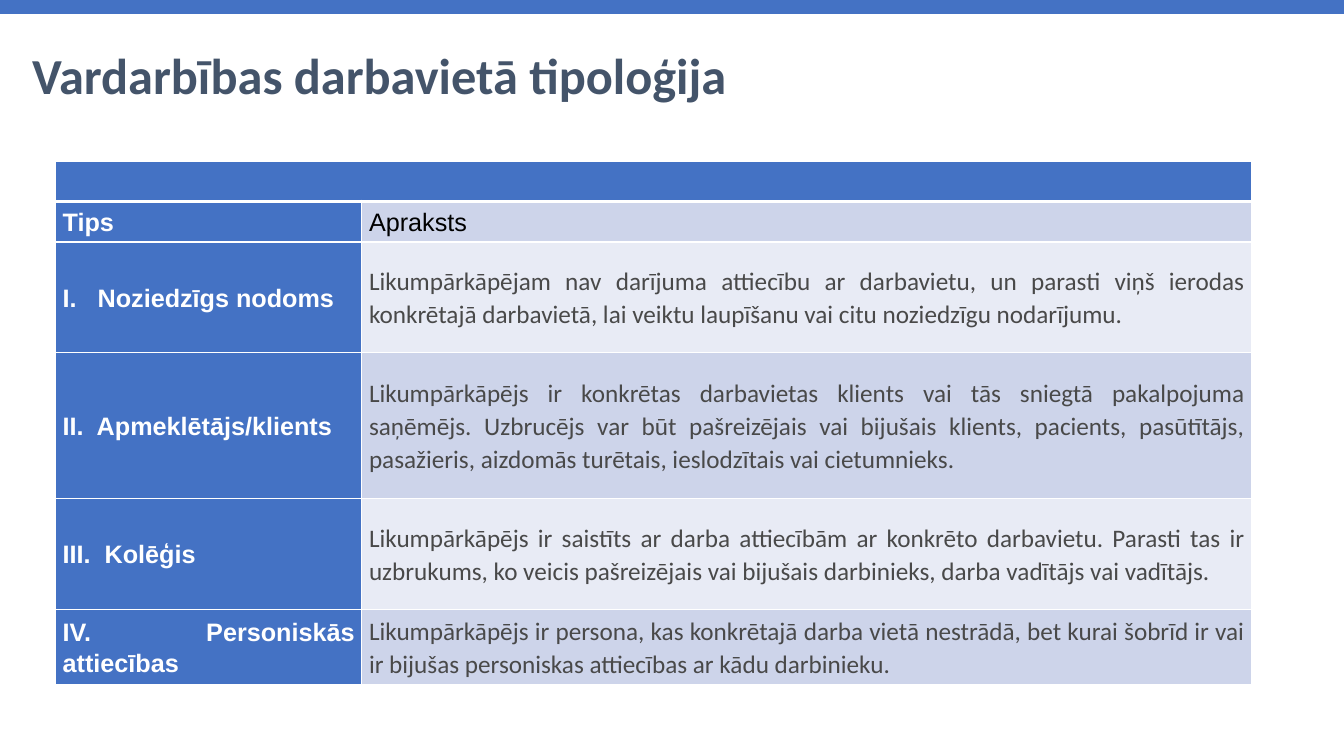
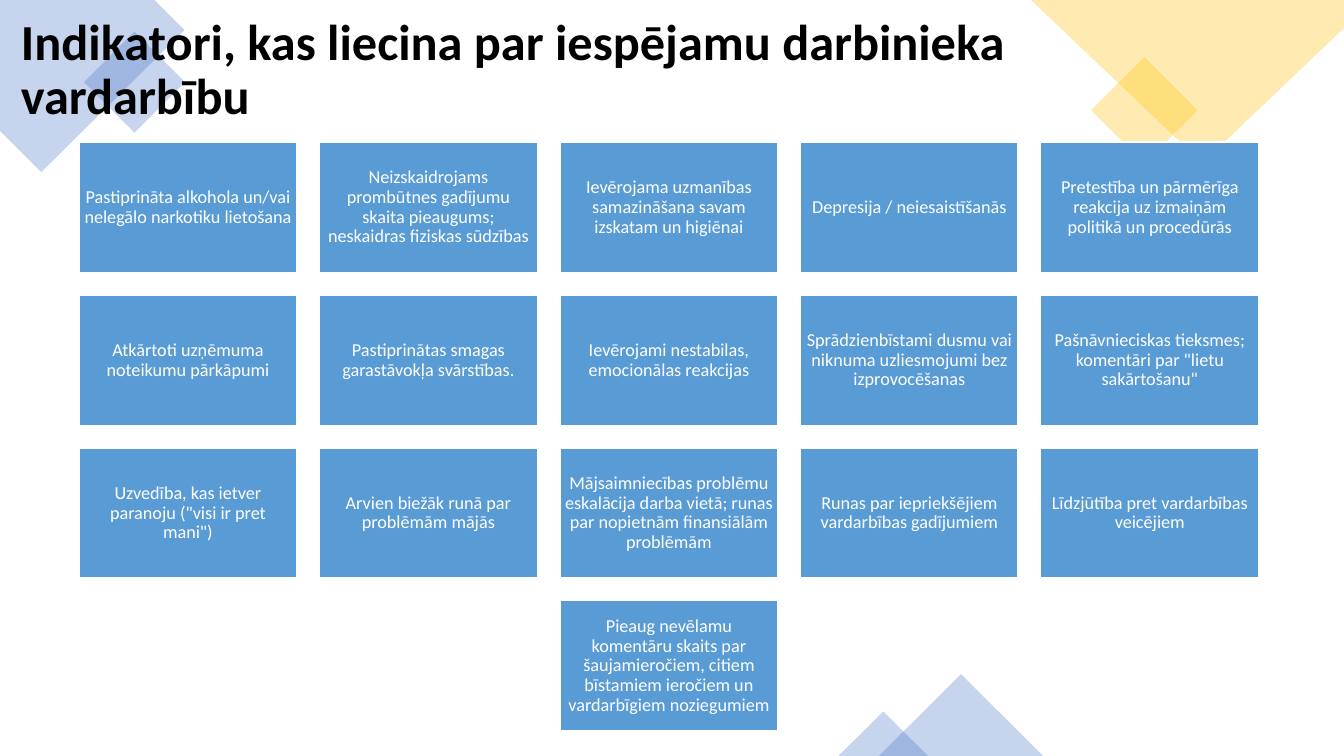
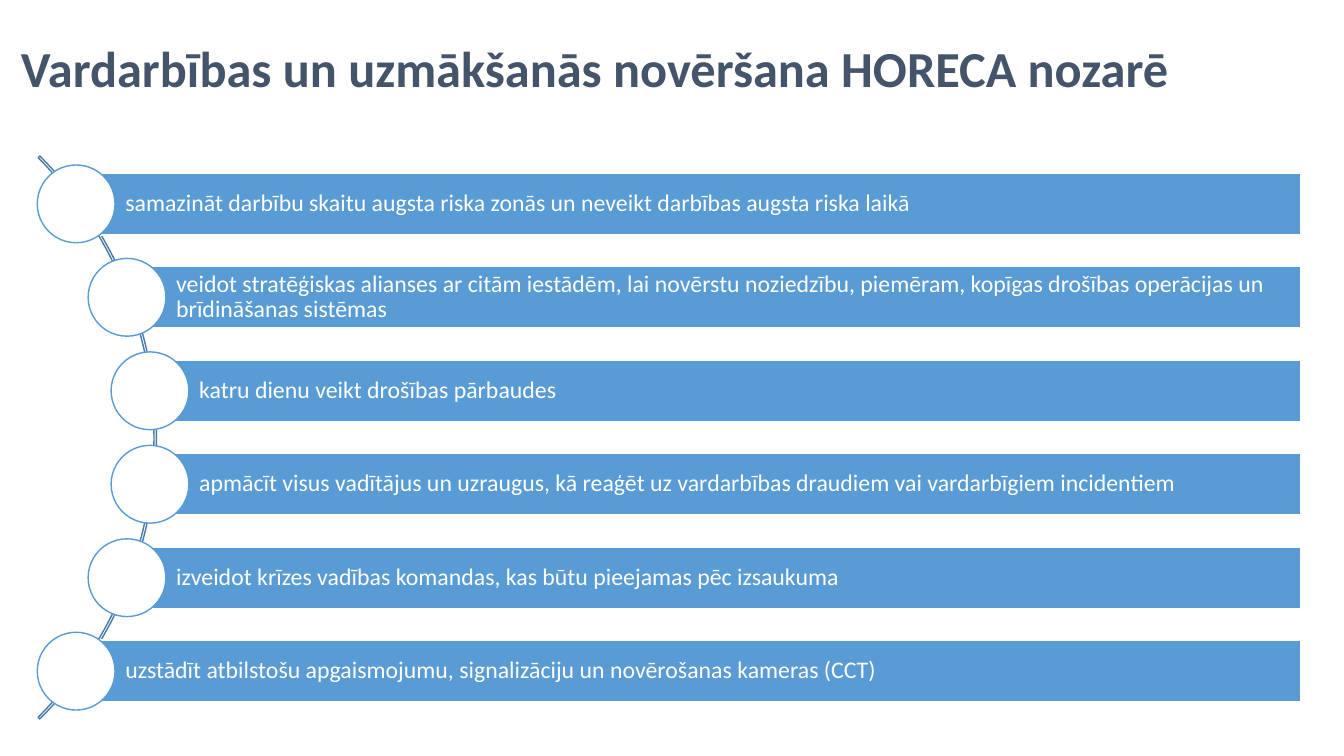
import math

import lxml.etree
import pptx
import pptx.dml.color
import pptx.enum.shapes
import pptx.enum.text
import pptx.oxml.ns
import pptx.util

Cm = pptx.util.Cm
Pt = pptx.util.Pt
SHAPE = pptx.enum.shapes.MSO_SHAPE
ALIGN = pptx.enum.text.PP_ALIGN
ANCHOR = pptx.enum.text.MSO_ANCHOR

SLIDE_WIDTH, SLIDE_HEIGHT = 33.87, 19.05
BLUE, SKY, GOLD, NAVY = "4472C4", "599BD5", "FFC000", "44546A"
WHITE, BLACK, GREY, ARC_BLUE = "FFFFFF", "000000", "494949", "487AA8"
STRIPES = ["E8EBF5", "CDD4EA"]


def text_format(size, color, margins, name="Calibri", bold=False, spacing=0.9,
                align=ALIGN.LEFT, anchor=ANCHOR.MIDDLE):
    """Collect the values for a text holder, its paragraph and its font; margins in cm."""
    sides = ("margin_left", "margin_top", "margin_right", "margin_bottom")
    return {
        "holder": {"vertical_anchor": anchor, **dict(zip(sides, map(Cm, margins)))},
        "paragraph": {"line_spacing": spacing, "alignment": align},
        "font": {"size": Pt(size), "name": name, "bold": bold},
        "color": color,
    }


TITLE_MARGINS = (0.25, 0.13, 0.25, 0.13)
CELL_STYLE = {"size": 18, "margins": (0.18, 0, 0.18, 0), "spacing": 1.07, "align": ALIGN.JUSTIFY}
TITLE = text_format(36, NAVY, TITLE_MARGINS, bold=True)
LOW_TITLE = text_format(36, NAVY, TITLE_MARGINS, bold=True, anchor=ANCHOR.BOTTOM)
BLACK_TITLE = text_format(36, BLACK, TITLE_MARGINS, bold=True)
CARD = text_format(13, WHITE, (0.13, 0.13, 0.13, 0.13), align=ALIGN.CENTER)
BAR = text_format(17, WHITE, (1.24, 0.13, 0.13, 0.13))
TYPE_CELL = text_format(color=WHITE, name="Arial", bold=True, **CELL_STYLE)
HEADING_CELL = text_format(color=BLACK, name="Arial", **CELL_STYLE)
DESCRIPTION_CELL = text_format(color=GREY, **CELL_STYLE)

TYPES = [
    ("Tips", "Apraksts"),
    ("I.   Noziedzīgs nodoms",
     "Likumpārkāpējam nav darījuma attiecību ar darbavietu, un parasti viņš ierodas "
     "konkrētajā darbavietā, lai veiktu laupīšanu vai citu noziedzīgu nodarījumu."),
    ("II.  Apmeklētājs/klients",
     "Likumpārkāpējs ir konkrētas darbavietas klients vai tās sniegtā pakalpojuma "
     "saņēmējs. Uzbrucējs var būt pašreizējais vai bijušais klients, pacients, "
     "pasūtītājs, pasažieris, aizdomās turētais, ieslodzītais vai cietumnieks."),
    ("III.  Kolēģis",
     "Likumpārkāpējs ir saistīts ar darba attiecībām ar konkrēto darbavietu. Parasti tas ir "
     "uzbrukums, ko veicis pašreizējais vai bijušais darbinieks, darba vadītājs vai vadītājs."),
    ("IV.  Personiskās attiecības",
     "Likumpārkāpējs ir persona, kas konkrētajā darba vietā nestrādā, bet kurai šobrīd ir vai "
     "ir bijušas personiskas attiecības ar kādu darbinieku."),
]

INDICATORS = [
    "Pastiprināta alkohola un/vai nelegālo narkotiku lietošana",
    "Neizskaidrojams prombūtnes gadījumu skaita pieaugums; neskaidras fiziskas sūdzības",
    "Ievērojama uzmanības samazināšana savam izskatam un higiēnai",
    "Depresija / neiesaistīšanās",
    "Pretestība un pārmērīga reakcija uz izmaiņām politikā un procedūrās",
    "Atkārtoti uzņēmuma noteikumu pārkāpumi",
    "Pastiprinātas smagas garastāvokļa svārstības.",
    "Ievērojami nestabilas, emocionālas reakcijas",
    "Sprādzienbīstami dusmu vai niknuma uzliesmojumi bez izprovocēšanas",
    "Pašnāvnieciskas tieksmes; komentāri par \"lietu sakārtošanu\"",
    "Uzvedība, kas ietver paranoju (\"visi ir pret mani\")",
    "Arvien biežāk runā par problēmām mājās",
    "Mājsaimniecības problēmu eskalācija darba vietā; runas par nopietnām finansiālām problēmām",
    "Runas par iepriekšējiem vardarbības gadījumiem",
    "Līdzjūtība pret vardarbības veicējiem",
    "Pieaug nevēlamu komentāru skaits par šaujamieročiem, citiem bīstamiem ieročiem un "
    "vardarbīgiem noziegumiem",
]

MEASURES = [
    "samazināt darbību skaitu augsta riska zonās un neveikt darbības augsta riska laikā",
    "veidot stratēģiskas alianses ar citām iestādēm, lai novērstu noziedzību, piemēram, "
    "kopīgas drošības operācijas un brīdināšanas sistēmas",
    "katru dienu veikt drošības pārbaudes",
    "apmācīt visus vadītājus un uzraugus, kā reaģēt uz vardarbības draudiem vai "
    "vardarbīgiem incidentiem",
    "izveidot krīzes vadības komandas, kas būtu pieejamas pēc izsaukuma",
    "uzstādīt atbilstošu apgaismojumu, signalizāciju un novērošanas kameras (CCT)",
]


def rgb(color):
    return pptx.dml.color.RGBColor.from_string(color)


def set_values(target, values):
    for name, value in values.items():
        setattr(target, name, value)


def write(holder, text, style):
    """Fill a text frame or a table cell with one formatted paragraph."""
    set_values(holder, style["holder"])
    frame = getattr(holder, "text_frame", holder)
    frame.word_wrap = True
    paragraph = frame.paragraphs[0]
    set_values(paragraph, style["paragraph"])
    run = paragraph.add_run()
    run.text = text
    set_values(run.font, style["font"])
    run.font.color.rgb = rgb(style["color"])


def paint(shape, fill=None, line=None, width=1, opacity=100):
    shape.shadow.inherit = False
    if fill:
        shape.fill.solid()
        shape.fill.fore_color.rgb = rgb(fill)
    else:
        shape.fill.background()
    if opacity < 100:
        color = shape._element.spPr.find(".//" + pptx.oxml.ns.qn("a:srgbClr"))
        lxml.etree.SubElement(color, pptx.oxml.ns.qn("a:alpha"), val=str(opacity * 1000))
    if line:
        shape.line.color.rgb = rgb(line)
        shape.line.width = Pt(width)
    else:
        shape.line.fill.background()


def add_shape(slide, kind, box, **look):
    """Add a preset shape; box is left, top, width, height in cm."""
    shape = slide.shapes.add_shape(kind, *map(Cm, box))
    paint(shape, **look)
    return shape


def add_title(slide, text, style=TITLE, box=(0.28, 0.23, 30.07, 3.12)):
    write(slide.shapes.add_textbox(*map(Cm, box)).text_frame, text, style)


def add_cell_borders(cell, **widths):
    """Draw white borders on the sides L, R, T and B, widths in points."""
    properties = cell._tc.get_or_add_tcPr()
    for side, width in widths.items():
        line = lxml.etree.SubElement(
            properties, pptx.oxml.ns.qn("a:ln" + side), w=str(Pt(width)))
        fill = lxml.etree.SubElement(line, pptx.oxml.ns.qn("a:solidFill"))
        lxml.etree.SubElement(fill, pptx.oxml.ns.qn("a:srgbClr"), val=WHITE)


def add_type_table(slide, left, top, columns, rows):
    frame = slide.shapes.add_table(
        len(rows), len(columns), *map(Cm, (left, top, sum(columns), sum(rows))))
    table = frame.table
    for column, width in zip(table.columns, columns):
        column.width = Cm(width)
    for row_index, (row, height) in enumerate(zip(table.rows, rows)):
        row.height = Cm(height)
        for column_index, cell in enumerate(row.cells):
            add_cell_borders(cell, L=1, R=1, T=3 if row_index == 1 else 1,
                             B=3 if row_index == 0 else 1)
            blue = row_index == 0 or column_index == 0
            cell.fill.solid()
            cell.fill.fore_color.rgb = rgb(BLUE if blue else STRIPES[row_index % 2])
    table.cell(0, 0).merge(table.cell(0, 1))
    for row_index, (kind, description) in enumerate(TYPES, start=1):
        write(table.cell(row_index, 0), kind, TYPE_CELL)
        write(table.cell(row_index, 1), description,
              HEADING_CELL if row_index == 1 else DESCRIPTION_CELL)


def add_polygon(slide, points, **look):
    corners = [(Cm(x), Cm(y)) for x, y in points]
    builder = slide.shapes.build_freeform(*corners[0])
    builder.add_line_segments(corners[1:], close=True)
    paint(builder.convert_to_shape(), **look)


def add_corner_decorations(slide):
    blue = {"fill": BLUE, "opacity": 30}
    gold = {"fill": GOLD, "opacity": 30}
    add_polygon(slide, [(0, 0), (3.89, 0), (4.65, 0.76), (1.04, 4.34), (0, 3.3)], **blue)
    add_shape(slide, SHAPE.RECTANGLE, (2.49, 1.17, 1.8, 1.8), **blue).rotation = 45
    add_shape(slide, SHAPE.RECTANGLE, (27.89, 1.83, 1.9, 1.9), **gold).rotation = 45
    add_polygon(slide, [(25.98, 0), (SLIDE_WIDTH, 0), (SLIDE_WIDTH, 0.71), (30.3, 4.11)], **gold)
    for left, width, height in [(22.15, 4.14, 2.06), (21.13, 2.26, 1.12)]:
        add_shape(slide, SHAPE.ISOSCELES_TRIANGLE,
                  (left, SLIDE_HEIGHT - height, width, height), **blue)


def add_card_grid(slide, box, texts, columns=5, gap=0.55):
    """Fill the box with equal cards, the last row centred."""
    left, top, width, height = box
    rows = math.ceil(len(texts) / columns)
    card_width = (width - (columns - 1) * gap) / columns
    card_height = (height - (rows - 1) * gap) / rows
    for row in range(rows):
        row_texts = texts[row * columns:(row + 1) * columns]
        indent = (columns - len(row_texts)) * (card_width + gap) / 2
        for column, text in enumerate(row_texts):
            card = add_shape(
                slide, SHAPE.RECTANGLE,
                (left + indent + column * (card_width + gap),
                 top + row * (card_height + gap), card_width, card_height),
                fill=SKY, line=WHITE, width=1.5)
            write(card.text_frame, text, CARD)


def add_arc_list(slide, box, texts, radius=9.94, circle=1.96, bar_height=1.57):
    """Stack bars whose circles sit on an arc bulging to the right."""
    left, top, width, height = box
    pitch = height / len(texts)
    middle = top + height / 2
    arc_x = left + circle / 2 - math.sqrt(radius ** 2 - ((height - pitch) / 2) ** 2)
    outer = radius + 0.09
    arc = add_shape(slide, SHAPE.BLOCK_ARC,
                    (arc_x - outer, middle - outer, 2 * outer, 2 * outer), line=ARC_BLUE)
    for index, value in enumerate((189, 27, 0.003)):
        arc.adjustments[index] = value
    for index, text in enumerate(texts):
        y = top + (index + 0.5) * pitch
        x = arc_x + math.sqrt(radius ** 2 - (y - middle) ** 2)
        bar = add_shape(slide, SHAPE.RECTANGLE,
                        (x, y - bar_height / 2, left + width - x, bar_height),
                        fill=SKY, line=WHITE, width=1.5)
        write(bar.text_frame, text, BAR)
        add_shape(slide, SHAPE.OVAL, (x - circle / 2, y - circle / 2, circle, circle),
                  fill=WHITE, line=SKY)


def build_typology(slide):
    add_title(slide, "Vardarbības darbavietā tipoloģija", LOW_TITLE, (0.56, 0.81, 30.99, 1.98))
    add_shape(slide, SHAPE.RECTANGLE, (0, 0, SLIDE_WIDTH, 0.35), fill=BLUE)
    add_type_table(slide, 1.4, 4.06, (7.72, 22.43), (1.02, 1.02, 2.79, 3.68, 2.79, 1.9))


def build_indicators(slide):
    add_corner_decorations(slide)
    add_title(slide, "Indikatori, kas liecina par iespējamu darbinieka vardarbību", BLACK_TITLE)
    add_card_grid(slide, (1.98, 3.58, 29.75, 14.85), INDICATORS)


def build_prevention(slide):
    add_title(slide, "Vardarbības un uzmākšanās novēršana HORECA nozarē")
    add_arc_list(slide, (0.94, 3.96, 31.85, 14.13), MEASURES)


def main():
    presentation = pptx.Presentation()
    presentation.slide_width = Cm(SLIDE_WIDTH)
    presentation.slide_height = Cm(SLIDE_HEIGHT)
    for build in (build_typology, build_indicators, build_prevention):
        build(presentation.slides.add_slide(presentation.slide_layouts[6]))
    presentation.save("out.pptx")


if __name__ == "__main__":
    main()
